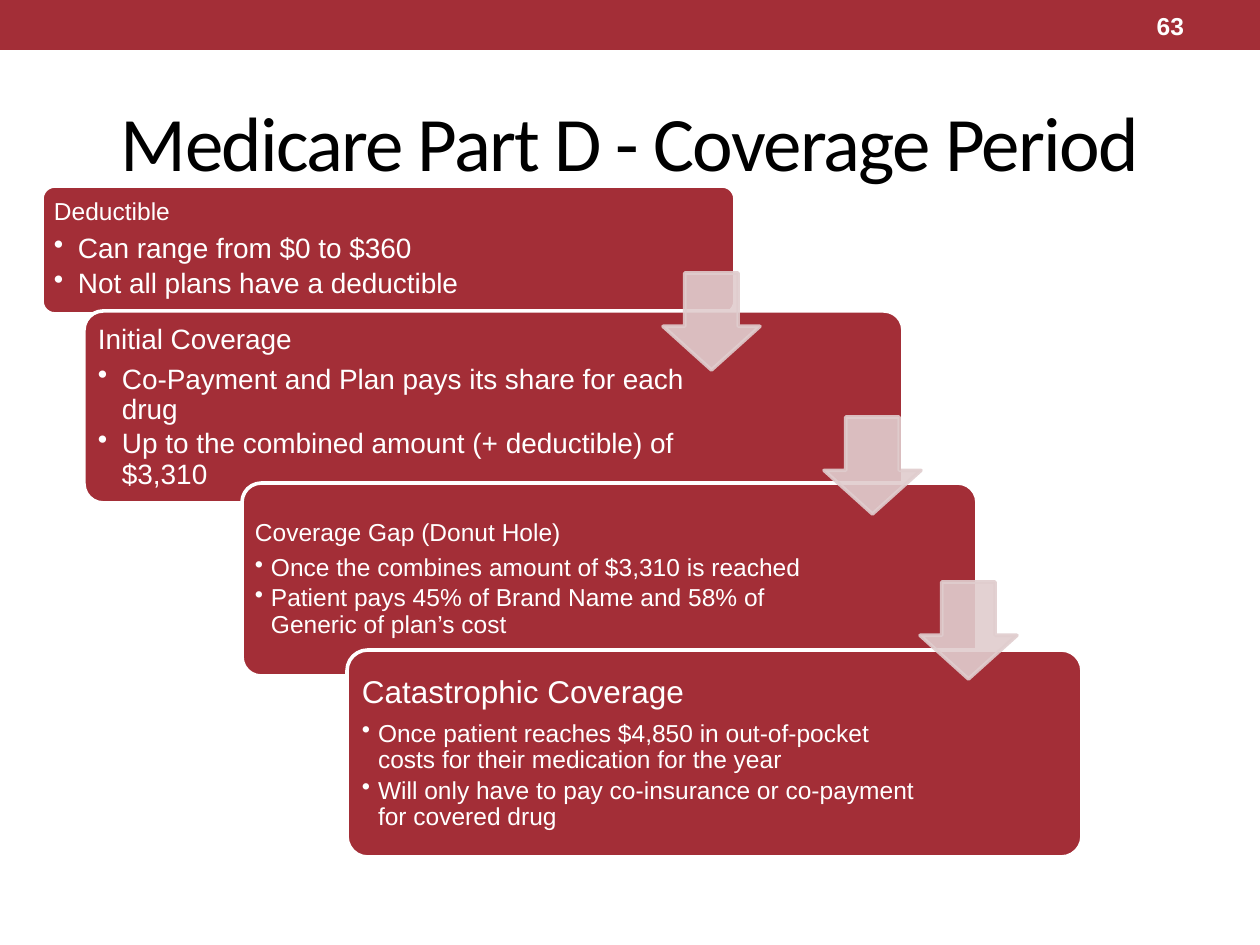
from lxml.etree import SubElement
from pptx import Presentation
from pptx.dml.color import RGBColor
from pptx.enum.shapes import MSO_SHAPE as Shape
from pptx.enum.text import MSO_ANCHOR as Anchor, PP_ALIGN as Align
from pptx.oxml.ns import qn
from pptx.util import Pt

PX = 914400 / 126
RED = RGBColor(0xA3, 0x2E, 0x37)
PINK = RGBColor(0xE0, 0xCD, 0xCE)
WHITE = RGBColor(0xFF, 0xFF, 0xFF)
BLACK = RGBColor(0, 0, 0)

ARROW_SIZE = 97
ARROWS = [(663, 273), (824, 417), (920, 582)]
STAGES = [
    {"card": (42, 186, 693, 128), "text": (45, 189, 548, 121),
     "inset": 9, "indent": 24, "sizes": (14, 16),
     "lines": ["Deductible", "Can range from $0 to $360",
               "Not all plans have a deductible"]},
    {"card": (84, 311, 819, 192), "text": (89, 317, 644, 181),
     "inset": 9, "indent": 24, "sizes": (16, 16),
     "lines": ["Initial Coverage",
               "Co-Payment and Plan pays its share for each drug",
               "Up to the combined amount (+ deductible) of $3,310"]},
    {"card": (242, 483, 735, 193), "text": (247, 489, 577, 181),
     "inset": 8, "indent": 16, "sizes": (14, 14),
     "lines": ["Coverage Gap (Donut Hole)",
               "Once the combines amount of $3,310 is reached",
               "Patient pays 45% of Brand Name and 58% of Generic of plan’s cost"]},
    {"card": (347, 650, 735, 207), "text": (353, 656, 576, 195),
     "inset": 9, "indent": 16, "sizes": (18, 14),
     "lines": ["Catastrophic Coverage",
               "Once patient reaches $4,850 in out-of-pocket costs for their medication for the year",
               "Will only have to pay co-insurance or co-payment for covered drug"]},
]

deck = Presentation()
deck.slide_width, deck.slide_height = int(1260 * PX), int(945 * PX)
page = deck.slides.add_slide(deck.slide_layouts[6])


def add_block(kind, bounds, fill, line=None, adjustments=()):
    block = page.shapes.add_shape(kind, *[int(n * PX) for n in bounds])
    block.shadow.inherit = False
    block.fill.solid()
    block.fill.fore_color.rgb = fill
    if line is None:
        block.line.fill.background()
    else:
        block.line.color.rgb = line
        block.line.width = Pt(2.08)
    for index, value in enumerate(adjustments):
        block.adjustments[index] = value
    return block


def add_text(bounds, lines, sizes, color, inset=(13, 6), **formats):
    box = page.shapes.add_textbox(*[int(n * PX) for n in bounds])
    frame = box.text_frame
    across, down = [int(n * PX) for n in inset]
    layout = {"word_wrap": True, "vertical_anchor": Anchor.MIDDLE,
              "margin_left": across, "margin_right": across,
              "margin_top": down, "margin_bottom": down}
    for name, value in layout.items():
        setattr(frame, name, value)
    for index, line in enumerate(lines):
        para = frame.add_paragraph() if index else frame.paragraphs[0]
        span = para.add_run()
        span.text = line
        look = {"name": "Arial", "size": Pt(sizes[min(index, 1)])} | formats
        for name, value in look.items():
            setattr(span.font, name, value)
        span.font.color.rgb = color
    return frame


add_block(Shape.RECTANGLE, (0, 0, 1260, 50), RED)
title = add_text((63, 73, 1134, 136), ["Medicare Part D - Coverage Period"],
                 [44], BLACK, name="Calibri").paragraphs[0]
title.alignment = Align.CENTER
title.runs[0].font._element.set("spc", "-100")

for stage in STAGES:
    add_block(Shape.ROUNDED_RECTANGLE, stage["card"], RED, WHITE, [0.1])
    frame = add_text(stage["text"], stage["lines"], stage["sizes"], WHITE,
                     (stage["inset"], stage["inset"]))
    for index, para in enumerate(frame.paragraphs):
        para.line_spacing = 0.9
        para.level = min(index, 1)
        props = para._p.get_or_add_pPr()
        after = SubElement(props, qn("a:spcAft"))
        SubElement(after, qn("a:spcPct")).set("val", "15000" if index else "35000")
        if index:
            indent = int(stage["indent"] * PX)
            props.set("marL", str(indent))
            props.set("indent", str(-indent))
            SubElement(props, qn("a:buChar")).set("char", "•")

for left, top in ARROWS:
    arrow = add_block(Shape.DOWN_ARROW, (left, top, ARROW_SIZE, ARROW_SIZE),
                      PINK, PINK, [0.55, 0.45])
    for color in arrow._element.spPr.iter(qn("a:srgbClr")):
        SubElement(color, qn("a:alpha")).set("val", "90000")

number = add_text((1050, 3, 147, 45), ["63"], [14], WHITE, bold=True)
number.paragraphs[0].alignment = Align.RIGHT

deck.save("out.pptx")
